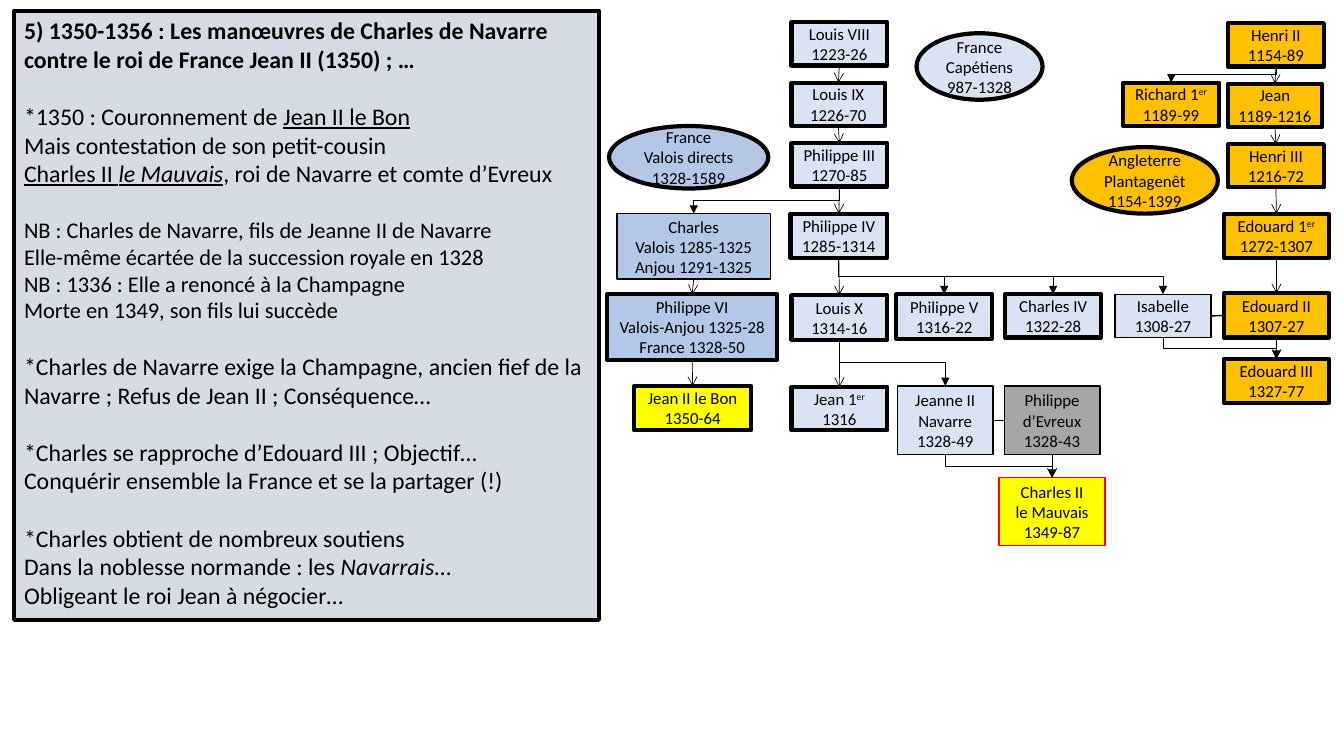
from dataclasses import dataclass
from typing import NamedTuple

from lxml.etree import SubElement
from pptx import Presentation
from pptx.dml.color import RGBColor
from pptx.enum.shapes import MSO_CONNECTOR, MSO_SHAPE
from pptx.enum.text import MSO_ANCHOR, PP_ALIGN
from pptx.oxml.ns import qn
from pptx.util import Inches, Pt


@dataclass(frozen=True)
class Theme:
    font: str = "Calibri"
    black: str = "000000"
    red: str = "FF0000"
    panel: str = "D6DCE5"
    capet: str = "DAE3F3"
    valois: str = "B4C7E7"
    england: str = "FFC000"
    focus: str = "FFFF00"
    evreux: str = "A6A6A6"
    body: float = 17
    note: float = 16
    label: float = 12
    thick: float = 3
    thin: float = 1
    arrow: float = 0.5
    blank_line: float = 20.4


T = Theme()


class Run(NamedTuple):
    text: str
    bold: bool = False
    italic: bool = False
    underline: bool = False
    raised: bool = False


class Para(NamedTuple):
    runs: list[Run]
    size: float = T.body
    gap: bool = False


class Box(NamedTuple):
    key: str
    text: str  # "/" starts a paragraph, "^" raises the rest of it
    left: float
    top: float
    fill: str
    width: float = 0.95
    height: float = 0.43
    weight: float = T.thick
    line: str = T.black
    shape: MSO_SHAPE = MSO_SHAPE.RECTANGLE


class Link(NamedTuple):
    start: str
    end: str
    bent: bool = False


BODY = [
    Para([Run("5) 1350-1356\u00a0: Les manœuvres de Charles de Navarre contre le roi "
              "de France Jean II (1350) ; …", bold=True)]),
    Para([Run("*1350 : Couronnement de "), Run("Jean II le Bon", underline=True)], gap=True),
    Para([Run("Mais contestation de son petit-cousin")]),
    Para([Run("Charles II ", underline=True), Run("le Mauvais", italic=True, underline=True),
          Run(", roi de Navarre et comte d’Evreux")]),
    Para([Run("NB : Charles de Navarre, fils de Jeanne II de Navarre")], T.note, True),
    Para([Run("Elle-même écartée de la succession royale en 1328")], T.note),
    Para([Run("NB : 1336 : Elle a renoncé à la Champagne")], T.note),
    Para([Run("Morte en 1349, son fils lui succède")], T.note),
    Para([Run("*Charles de Navarre exige la Champagne, ancien fief de la Navarre ; "
              "Refus de Jean II ; Conséquence…")], gap=True),
    Para([Run("*Charles se rapproche d’Edouard III ; Objectif…")], gap=True),
    Para([Run("Conquérir ensemble la France et se la partager (!)")]),
    Para([Run("*Charles obtient de nombreux soutiens")], gap=True),
    Para([Run("Dans la noblesse normande : les "), Run("Navarrais", italic=True), Run("…")]),
    Para([Run("Obligeant le roi Jean à négocier…")]),
]

BOXES = [
    # Dynasties
    Box("capetiens", "France/Capétiens/987-1328", 9.09, 0.33, T.capet, 1.25, 0.66,
        shape=MSO_SHAPE.OVAL),
    Box("valois", "France/Valois directs/1328-1589", 6.04, 1.25, T.valois, 1.58, 0.62,
        shape=MSO_SHAPE.OVAL),
    Box("plantagenet", "Angleterre/Plantagenêt/1154-1399", 10.63, 1.46, T.england, 1.45, 0.66,
        shape=MSO_SHAPE.OVAL),
    # Capetians
    Box("louis8", "Louis VIII/1223-26", 7.85, 0.22, T.capet),
    Box("louis9", "Louis IX/1226-70", 7.85, 0.82, T.capet, 0.93),
    Box("philippe3", "Philippe III/1270-85", 7.85, 1.42, T.capet),
    Box("philippe4", "Philippe IV/1285-1314", 7.84, 2.12, T.capet, 0.96, 0.44),
    Box("louis10", "Louis X 1314-16", 7.85, 2.93, T.capet, height=0.44),
    Box("philippe5", "Philippe V/1316-22", 8.89, 2.92, T.capet, height=0.44),
    Box("charles4", "Charles IV/1322-28", 9.97, 2.92, T.capet),
    Box("isabelle", "Isabelle/1308-27", 11.06, 2.92, T.capet, weight=T.thin),
    Box("jean1", "Jean 1^er/1316", 7.85, 3.84, T.capet),
    # Valois
    Box("charles", "Charles/Valois 1285-1325/Anjou 1291-1325", 6.12, 2.12, T.valois,
        1.52, 0.65, T.thin),
    Box("philippe6", "Philippe VI/Valois-Anjou 1325-28/France 1328-50", 6.02, 2.92,
        T.valois, 1.69, 0.65),
    Box("jean2", "Jean II le Bon/1350-64", 6.29, 3.83, T.focus, 1.16, 0.44),
    # Navarre
    Box("jeanne2", "Jeanne II/Navarre/1328-49", 8.9, 3.83, T.capet, height=0.68, weight=T.thin),
    Box("evreux", "Philippe d’Evreux/1328-43", 9.96, 3.83, T.evreux, height=0.68,
        weight=T.thin),
    Box("charles2", "Charles II/le Mauvais/1349-87", 9.91, 4.74, T.focus, 1.05, 0.67,
        T.thin, T.red),
    # Plantagenets
    Box("henri2", "Henri II/1154-89", 12.18, 0.23, T.england),
    Box("richard", "Richard 1^er/1189-99", 11.14, 0.82, T.england),
    Box("jean", "Jean/1189-1216", 12.18, 0.83, T.england, 0.93),
    Box("henri3", "Henri III/1216-72", 12.18, 1.43, T.england),
    Box("edouard1", "Edouard 1^er/1272-1307", 12.14, 2.12, T.england, 1.04, 0.44),
    Box("edouard2", "Edouard II/1307-27", 12.14, 2.91, T.england, 1.04, 0.44),
    Box("edouard3", "Edouard III/1327-77", 12.14, 3.56, T.england, 1.04, 0.44),
]

LINEAGES = [
    ["louis8", "louis9", "philippe3", "philippe4", "louis10", "jean1"],
    ["charles", "philippe6", "jean2"],
    ["henri2", "jean", "henri3", "edouard1", "edouard2", "edouard3"],
    ["evreux", "charles2"],
]
BRANCHES = [
    Link("philippe3", "charles", True),
    *(Link("philippe4", child, True) for child in ("philippe5", "charles4", "isabelle")),
    Link("henri2", "richard", True),
    Link("isabelle", "edouard3", True),
    Link("louis10", "jeanne2", True),
    Link("jeanne2", "charles2", True),
]
MARRIAGES = [Link("jeanne2", "evreux"), Link("isabelle", "edouard2")]


def add_box(s, box: Box):
    sp = s.shapes.add_shape(box.shape, Inches(box.left), Inches(box.top),
                            Inches(box.width), Inches(box.height))
    sp.shadow.inherit = False
    sp.fill.solid()
    sp.fill.fore_color.rgb = RGBColor.from_string(box.fill)
    sp.line.color.rgb = RGBColor.from_string(box.line)
    sp.line.width = Pt(box.weight)
    sp.text_frame.word_wrap = True
    return sp


def write(tf, paras: list[Para], align: PP_ALIGN) -> None:
    for i, para in enumerate(paras):
        p = tf.add_paragraph() if i else tf.paragraphs[0]
        p.alignment = align
        if para.gap:
            p.space_before = Pt(T.blank_line)
        for run in para.runs:
            r = p.add_run()
            r.text = run.text
            r.font.name, r.font.size = T.font, Pt(para.size)
            r.font.bold, r.font.italic, r.font.underline = run.bold, run.italic, run.underline
            r.font.color.rgb = RGBColor.from_string(T.black)
            if run.raised:
                r.font._element.set("baseline", "30000")


def label(text: str) -> list[Para]:
    paras = []
    for line in text.split("/"):
        base, _, raised = line.partition("^")
        runs = [Run(base)] + ([Run(raised, raised=True)] if raised else [])
        paras.append(Para(runs, T.label))
    return paras


def add_link(s, start, end, sites: tuple[int, int], weight: float, head: str = "",
             bent: bool = False) -> None:
    kind = MSO_CONNECTOR.ELBOW if bent else MSO_CONNECTOR.STRAIGHT
    c = s.shapes.add_connector(kind, 0, 0, 0, 0)
    c.begin_connect(start, sites[0])
    c.end_connect(end, sites[1])
    if bent:  # turn the elbow so that it leaves downwards
        dx, dy = c.end_x - c.begin_x, c.end_y - c.begin_y
        mid_x, mid_y = (c.begin_x + c.end_x) // 2, (c.begin_y + c.end_y) // 2
        c.left, c.top = mid_x - dy // 2, mid_y - abs(dx) // 2
        c.width, c.height = dy, abs(dx)
        xfrm = c._element.spPr.find(qn("a:xfrm"))
        xfrm.attrib.clear()
        xfrm.set("rot", str((270 if dx > 0 else 90) * 60000))
        if dx > 0:
            xfrm.set("flipH", "1")
    c.line.color.rgb = RGBColor.from_string(T.black)
    c.line.width = Pt(weight)
    if head:
        SubElement(c.line._get_or_add_ln(), qn("a:tailEnd"), type=head)
    SubElement(c._element.spPr, qn("a:effectLst"))


def main() -> None:
    prs = Presentation()
    prs.slide_width, prs.slide_height = Inches(13.33), Inches(7.5)
    s = prs.slides.add_slide(prs.slide_layouts[6])

    # Narrative panel
    panel = add_box(s, Box("panel", "", 0.14, 0.11, T.panel, 5.8, 6.04))
    panel.text_frame.vertical_anchor = MSO_ANCHOR.TOP
    write(panel.text_frame, BODY, PP_ALIGN.LEFT)

    # Family tree
    tree = {}
    for box in BOXES:
        sp = tree[box.key] = add_box(s, box)
        tf = sp.text_frame
        tf.vertical_anchor = MSO_ANCHOR.MIDDLE
        tf.margin_left = tf.margin_right = Inches(0.05)
        write(tf, label(box.text), PP_ALIGN.CENTER)

    # Descent and marriages
    descents = [Link(a, b) for line in LINEAGES for a, b in zip(line, line[1:])]
    for link in descents + BRANCHES:
        add_link(s, tree[link.start], tree[link.end], (2, 0), T.arrow,
                 "triangle" if link.bent else "arrow", link.bent)
    for link in MARRIAGES:
        add_link(s, tree[link.start], tree[link.end], (3, 1), T.thin)

    prs.save("out.pptx")


if __name__ == "__main__":
    main()
